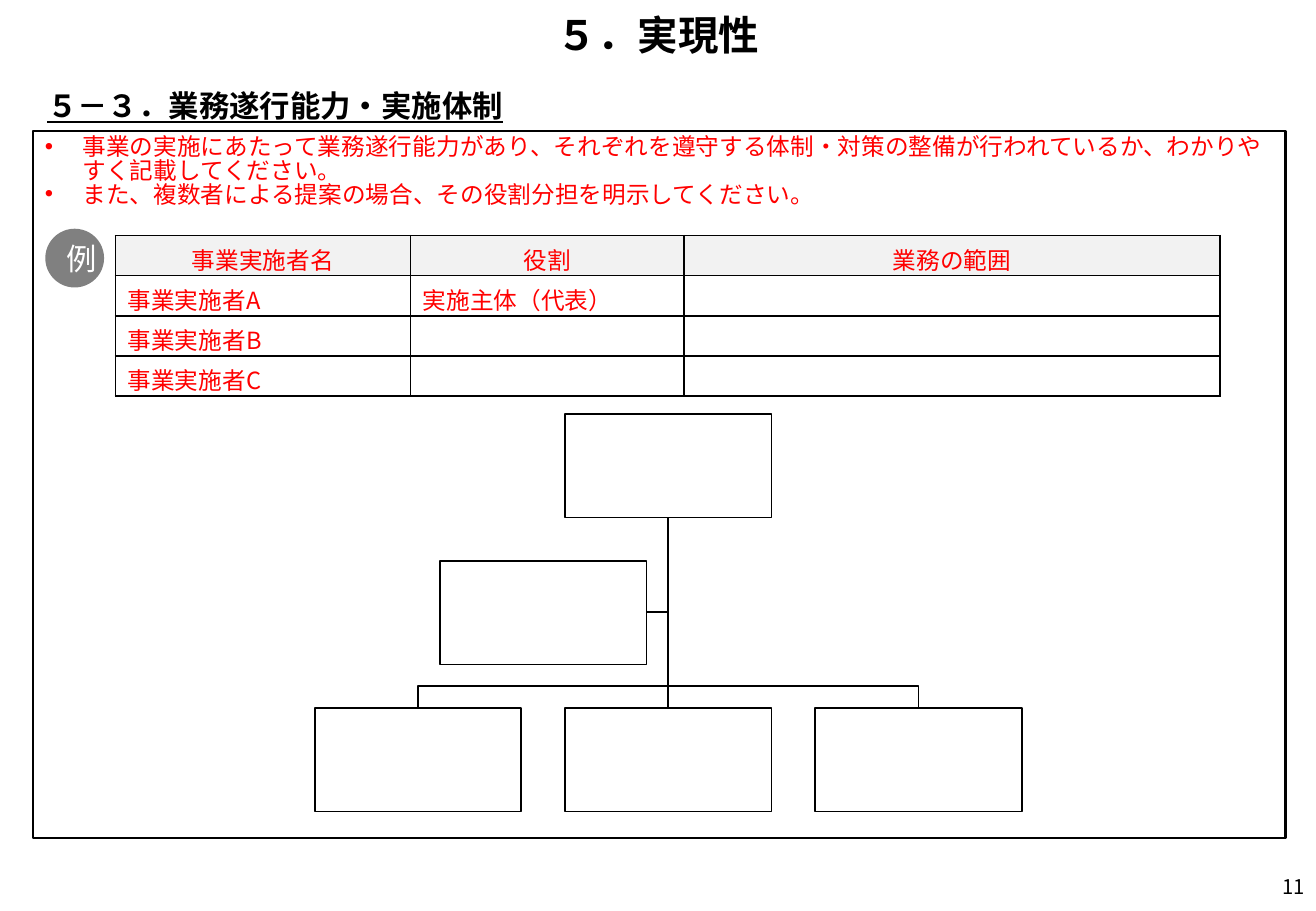
from lxml import etree
from pptx import Presentation
from pptx.dml.color import RGBColor
from pptx.enum.shapes import MSO_CONNECTOR, MSO_SHAPE
from pptx.enum.text import MSO_ANCHOR, PP_ALIGN
from pptx.oxml.ns import qn
from pptx.util import Emu, Pt

PX = 9144  # EMU per px, 100 px to the inch
FONT = "Noto Sans CJK JP"
COLORS = {
    "black": "000000",
    "white": "FFFFFF",
    "guidance": "FF0000",
    "header": "F2F2F2",
    "badge": "808080",
}
RECT, OVAL = MSO_SHAPE.RECTANGLE, MSO_SHAPE.OVAL
STRAIGHT = MSO_CONNECTOR.STRAIGHT
LEFT, CENTER, RIGHT = PP_ALIGN.LEFT, PP_ALIGN.CENTER, PP_ALIGN.RIGHT
TOP, MIDDLE = MSO_ANCHOR.TOP, MSO_ANCHOR.MIDDLE


def px(*lengths):
    return [Emu(length * PX) for length in lengths]


def rgb(name):
    return RGBColor.from_string(COLORS[name])


class SlideBuilder:
    def __init__(self, width, height):
        self.deck = Presentation()
        self.deck.slide_width, self.deck.slide_height = px(width, height)
        self.slide = self.deck.slides.add_slide(self.deck.slide_layouts[5])
        self.shapes = self.slide.shapes

    def set_text(self, frame, text, size, color, align=LEFT, anchor=TOP,
                 bold=False, underline=False, spacing=None):
        frame.text = text
        frame.word_wrap = True
        frame.vertical_anchor = anchor
        for paragraph in frame.paragraphs:
            paragraph.alignment = align
            paragraph.line_spacing = spacing
            for run in paragraph.runs:
                font = run.font
                font.size, font.name = Pt(size), FONT
                font.bold, font.underline = bold, underline
                font.color.rgb = rgb(color)
                etree.SubElement(run._r.rPr, qn("a:ea"), typeface=FONT)

    def title(self, box, text):
        heading = self.shapes.title
        heading.left, heading.top, heading.width, heading.height = px(*box)
        self.set_text(heading.text_frame, text, 24, "black", CENTER, MIDDLE,
                      bold=True, spacing=0.9)

    def text(self, box, text, size, **style):
        label = self.shapes.add_textbox(*px(*box))
        self.set_text(label.text_frame, text, size, "black", **style)

    def shape(self, kind, box, fill="white", line="black", weight=1):
        shape = self.shapes.add_shape(kind, *px(*box))
        shape.shadow.inherit = False
        shape.fill.solid()
        shape.fill.fore_color.rgb = rgb(fill)
        shape.line.color.rgb = rgb(line)
        shape.line.width = Pt(weight)
        return shape

    def bullets(self, frame, items, size, color, indent):
        self.set_text(frame, "\n".join(items), size, color, spacing=0.83)
        for paragraph in frame.paragraphs:
            properties = paragraph._p.get_or_add_pPr()
            properties.set("marL", str(indent * PX))
            properties.set("indent", str(-indent * PX))
            etree.SubElement(properties, qn("a:buFont"), typeface="Arial")
            etree.SubElement(properties, qn("a:buChar"), char="•")

    def line(self, start, end):
        connector = self.shapes.add_connector(STRAIGHT, *px(*start, *end))
        connector.line.color.rgb = rgb("black")
        connector.line.width = Pt(1)
        etree.SubElement(connector._element.spPr, qn("a:effectLst"))

    def bent_line(self, start, *points):
        pen = self.shapes.build_freeform(*start, scale=PX)
        pen.add_line_segments(points, close=False)
        bend = pen.convert_to_shape()
        bend.shadow.inherit = False
        bend.fill.background()
        bend.line.color.rgb = rgb("black")
        bend.line.width = Pt(1)

    def cell_borders(self, cell):
        properties = cell._tc.get_or_add_tcPr()
        for side in ("lnL", "lnR", "lnT", "lnB"):
            border = etree.SubElement(properties, qn(f"a:{side}"), w=str(Pt(1)))
            paint = etree.SubElement(border, qn("a:solidFill"))
            etree.SubElement(paint, qn("a:srgbClr"), val=COLORS["black"])

    def table(self, left, top, widths, row_height, rows, size, color):
        box = (left, top, sum(widths), row_height * len(rows))
        table = self.shapes.add_table(len(rows), len(widths), *px(*box)).table
        table.horz_banding = False
        for column, width in zip(table.columns, px(*widths)):
            column.width = width
        for r, row in enumerate(rows):
            for c, text in enumerate(row):
                cell = table.cell(r, c)
                cell.margin_top, cell.margin_bottom = px(5, 0)
                self.set_text(cell.text_frame, text, size, color,
                              LEFT if r else CENTER)
                if not text:
                    etree.SubElement(cell.text_frame.paragraphs[0]._p,
                                     qn("a:endParaRPr"), sz=str(size * 100))
                self.cell_borders(cell)
                cell.fill.solid()
                cell.fill.fore_color.rgb = rgb("white" if r else "header")

    def org_chart(self, center, top, width, height, pitch):
        """Draw a lead box, an assistant to its left and three members."""
        gap = pitch - width
        lead_bottom = top + height
        assistant_top = lead_bottom + gap
        members_top = assistant_top + height + gap
        assistant_middle = assistant_top + height // 2
        assistant_right = center - gap // 2
        bar = members_top - gap // 2
        start = (center, lead_bottom)

        self.bent_line(start, (center, assistant_middle),
                       (assistant_right, assistant_middle))
        member_centers = [center + step * pitch for step in (-1, 0, 1)]
        for x in member_centers:
            if x == center:
                self.line(start, (x, members_top))
            else:
                self.bent_line(start, (center, bar), (x, bar), (x, members_top))

        places = [(center - width // 2, top),
                  (assistant_right - width, assistant_top)]
        places += [(x - width // 2, members_top) for x in member_centers]
        for left, box_top in places:
            self.shape(RECT, (left, box_top, width, height))


def main():
    page = SlideBuilder(1083, 750)
    page.title((0, 0, 1083, 61), "５．実現性")
    panel = page.shape(RECT, (27, 108, 1031, 582), weight=1.5)
    page.bullets(panel.text_frame, [
        "事業の実施にあたって業務遂行能力があり、それぞれを遵守する体制・対策の整備が行われているか、わかりやすく記載してください。",
        "また、複数者による提案の場合、その役割分担を明示してください。",
    ], 14, "guidance", 31)
    page.text((840, 710, 244, 40), "11", 12, align=RIGHT, anchor=MIDDLE)
    page.text((29, 70, 1024, 79), "５－３．業務遂行能力・実施体制", 18,
              bold=True, underline=True, spacing=0.9)
    page.table(95, 194, (243, 225, 441), 33, [
        ("事業実施者名", "役割", "業務の範囲"),
        ("事業実施者A", "実施主体（代表）", ""),
        ("事業実施者B", "", ""),
        ("事業実施者C", "", ""),
    ], 14, "guidance")
    page.org_chart(center=550, top=341, width=170, height=85, pitch=206)
    badge = page.shape(OVAL, (38, 189, 47, 47), "badge", "badge")
    page.set_text(badge.text_frame, "例", 18, "white", CENTER, MIDDLE)
    page.deck.save("out.pptx")


if __name__ == "__main__":
    main()
